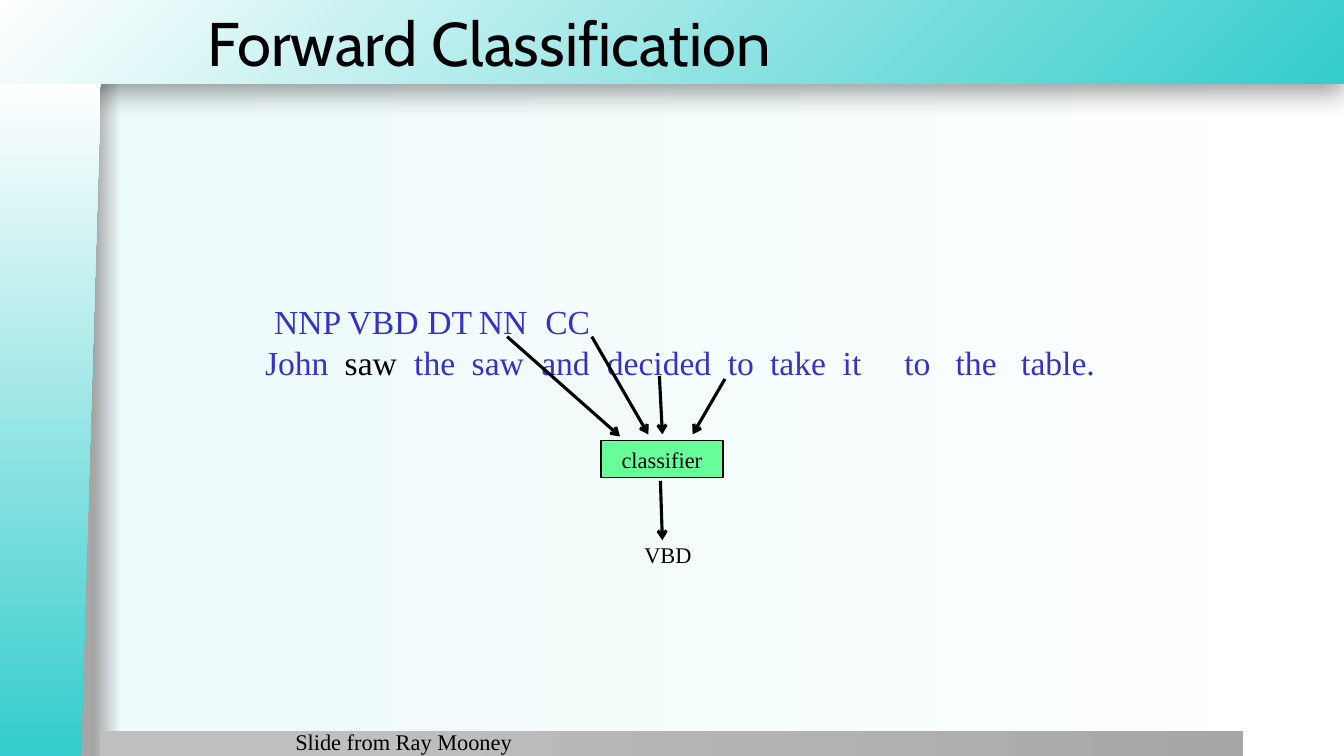
import pptx
import pptx.dml.color
import pptx.enum.shapes
import pptx.enum.text
import pptx.oxml
import pptx.oxml.ns
import pptx.util

Inches = pptx.util.Inches
Pt = pptx.util.Pt
RGBColor = pptx.dml.color.RGBColor
Shape = pptx.enum.shapes.MSO_SHAPE
Align = pptx.enum.text.PP_ALIGN
Anchor = pptx.enum.text.MSO_ANCHOR

BLACK = RGBColor(0x00, 0x00, 0x00)
WHITE = RGBColor(0xFF, 0xFF, 0xFF)
TEAL = RGBColor(0x34, 0xCC, 0xCC)
MIST = RGBColor(0xED, 0xFB, 0xFB)
GRAY = RGBColor(0xA6, 0xA6, 0xA6)
BAR_LIGHT = RGBColor(0xBF, 0xBF, 0xBF)
BAR_DARK = RGBColor(0xA7, 0xA7, 0xA7)
BLUE = RGBColor(0x33, 0x33, 0xCC)
GREEN = RGBColor(0x66, 0xFF, 0x99)

LINEAR = '<a:lin ang="0" scaled="0"/>'
CORNER = '<a:path path="circle"><a:fillToRect l="100000" t="100000"/></a:path>'
HEADER_SHADOW = (
    '<a:outerShdw blurRad="254000" dist="76200" dir="5400000" algn="t" rotWithShape="0">'
    '<a:srgbClr val="000000"><a:alpha val="40000"/></a:srgbClr></a:outerShdw>'
)

TAGS = [("NNP", 0.09), ("VBD", 0.82), ("DT", 1.61), ("NN", 2.12), ("CC", 2.78)]
WORDS = [
    ("John", 0), ("saw", 0.79), ("the", 1.48), ("saw", 2.05), ("and", 2.74),
    ("decided", 3.39), ("to", 4.59), ("take", 5.01), ("it", 5.73),
    ("to", 6.34), ("the", 6.85), ("table.", 7.5),
]
CURRENT_WORD = 1
ARROWS = [
    (5.03, 3.34, 6.15, 4.33),
    (5.87, 3.34, 6.43, 4.31),
    (6.54, 3.73, 6.57, 4.31),
    (7.19, 3.76, 6.87, 4.31),
    (6.55, 4.77, 6.57, 5.36),
]


def element(xml):
    return pptx.oxml.parse_xml(
        xml.replace(">", f' {pptx.oxml.ns.nsdecls("a")}>', 1)
        if not xml.split(">", 1)[0].endswith("/")
        else xml.replace("/>", f' {pptx.oxml.ns.nsdecls("a")}/>', 1)
    )


def apply_formats(target, formats):
    for name, value in formats.items():
        setattr(target, name, value)


class SlideBuilder:
    font = "Times New Roman"
    title_font = "Cabin"

    def __init__(self, deck):
        self.page = deck.slides.add_slide(deck.slide_layouts[5])

    def gradient(self, fill, stops, direction=LINEAR):
        fill.gradient()
        grad = fill._fill._gradFill
        for child in list(grad):
            grad.remove(child)
        marks = "".join(
            f'<a:gs pos="{position * 1000}"><a:srgbClr val="{color}"/></a:gs>'
            for position, color in stops
        )
        grad.append(element(f"<a:gsLst>{marks}</a:gsLst>"))
        grad.append(element(direction))

    def shape(self, kind, *frame):
        box = self.page.shapes.add_shape(kind, *map(Inches, frame))
        box.shadow.inherit = False
        box.line.fill.background()
        return box

    def panel(self, kind, frame, stops, direction=LINEAR):
        box = self.shape(kind, *frame)
        self.gradient(box.fill, stops, direction)
        return box

    def span(self, para, text, size, color=BLACK, font=None):
        span = para.add_run()
        span.text = text
        apply_formats(span.font, {"size": Pt(size), "name": font or self.font})
        span.font.color.rgb = color

    def title(self, text, *frame):
        box = self.page.shapes.title
        names = ("left", "top", "width", "height")
        apply_formats(box, dict(zip(names, map(Inches, frame))))
        apply_formats(box.text_frame, {
            "auto_size": pptx.enum.text.MSO_AUTO_SIZE.NONE,
            "vertical_anchor": Anchor.MIDDLE,
            "word_wrap": True,
        })
        para = box.text_frame.paragraphs[0]
        para.alignment = Align.LEFT
        self.span(para, text, 44, font=self.title_font)
        box._element.getparent().append(box._element)

    def text_box(self, *frame):
        box = self.page.shapes.add_textbox(*map(Inches, frame))
        box.text_frame.word_wrap = True
        return box.text_frame

    def label(self, text, frame, align=Align.LEFT):
        para = self.text_box(*frame).paragraphs[0]
        para.alignment = align
        self.span(para, text, 16)

    def columns(self, para, entries, highlight=None):
        stops = "".join(
            f'<a:tab pos="{Inches(offset)}" algn="l"/>' for _, offset in entries if offset
        )
        para._p.get_or_add_pPr().append(element(f"<a:tabLst>{stops}</a:tabLst>"))
        for index, (word, offset) in enumerate(entries):
            color = BLACK if index == highlight else BLUE
            self.span(para, "\t" + word if offset else word, 24, color)

    def node(self, text, *frame):
        box = self.shape(Shape.RECTANGLE, *frame)
        box.fill.solid()
        box.fill.fore_color.rgb = GREEN
        box.line.color.rgb = BLACK
        box.line.width = Pt(1)
        box.text_frame.vertical_anchor = Anchor.MIDDLE
        para = box.text_frame.paragraphs[0]
        para.alignment = Align.CENTER
        self.span(para, text, 16)

    def arrow(self, *ends):
        line = self.page.shapes.add_connector(
            pptx.enum.shapes.MSO_CONNECTOR.STRAIGHT, *map(Inches, ends)
        )
        line.line.color.rgb = BLACK
        line.line.width = Pt(2.25)
        line.line._get_or_add_ln().append(element('<a:tailEnd type="arrow"/>'))
        line._element.spPr.append(element("<a:effectLst/>"))


def main():
    deck = pptx.Presentation()
    deck.slide_width = Inches(13.33)
    deck.slide_height = Inches(7.5)
    slide = SlideBuilder(deck)

    slide.gradient(slide.page.background.fill, [(7, GRAY), (9, MIST), (100, WHITE)])
    teal_fade = [(0, TEAL), (100, WHITE)]
    header = slide.panel(Shape.RECTANGLE, (-0.01, 0, 13.34, 0.83), teal_fade, CORNER)
    effects = header._element.spPr.find(pptx.oxml.ns.qn("a:effectLst"))
    effects.append(element(HEADER_SHADOW))
    slide.panel(Shape.RECTANGLE, (1, 7.25, 11.33, 0.26), [(20, BAR_LIGHT), (100, BAR_DARK)])
    side = slide.panel(Shape.FLOWCHART_MANUAL_INPUT, (-2.84, 3.67, 6.68, 1), teal_fade)
    side.rotation = 270
    side._element.spPr.xfrm.set("flipV", "1")

    slide.title("Forward Classification", 1.96, 0, 11.38, 0.83)
    sentence = slide.text_box(2.53, 2.94, 8.51, 0.91)
    slide.columns(sentence.paragraphs[0], TAGS)
    slide.columns(sentence.add_paragraph(), WORDS, CURRENT_WORD)
    slide.node("classifier", 5.96, 4.37, 1.21, 0.37)
    for ends in ARROWS:
        slide.arrow(*ends)
    slide.label("VBD", (6.17, 5.32, 0.91, 0.37), Align.CENTER)
    slide.label("Slide from Ray Mooney", (2.83, 7.17, 3.42, 0.25))

    deck.save("out.pptx")


if __name__ == "__main__":
    main()
